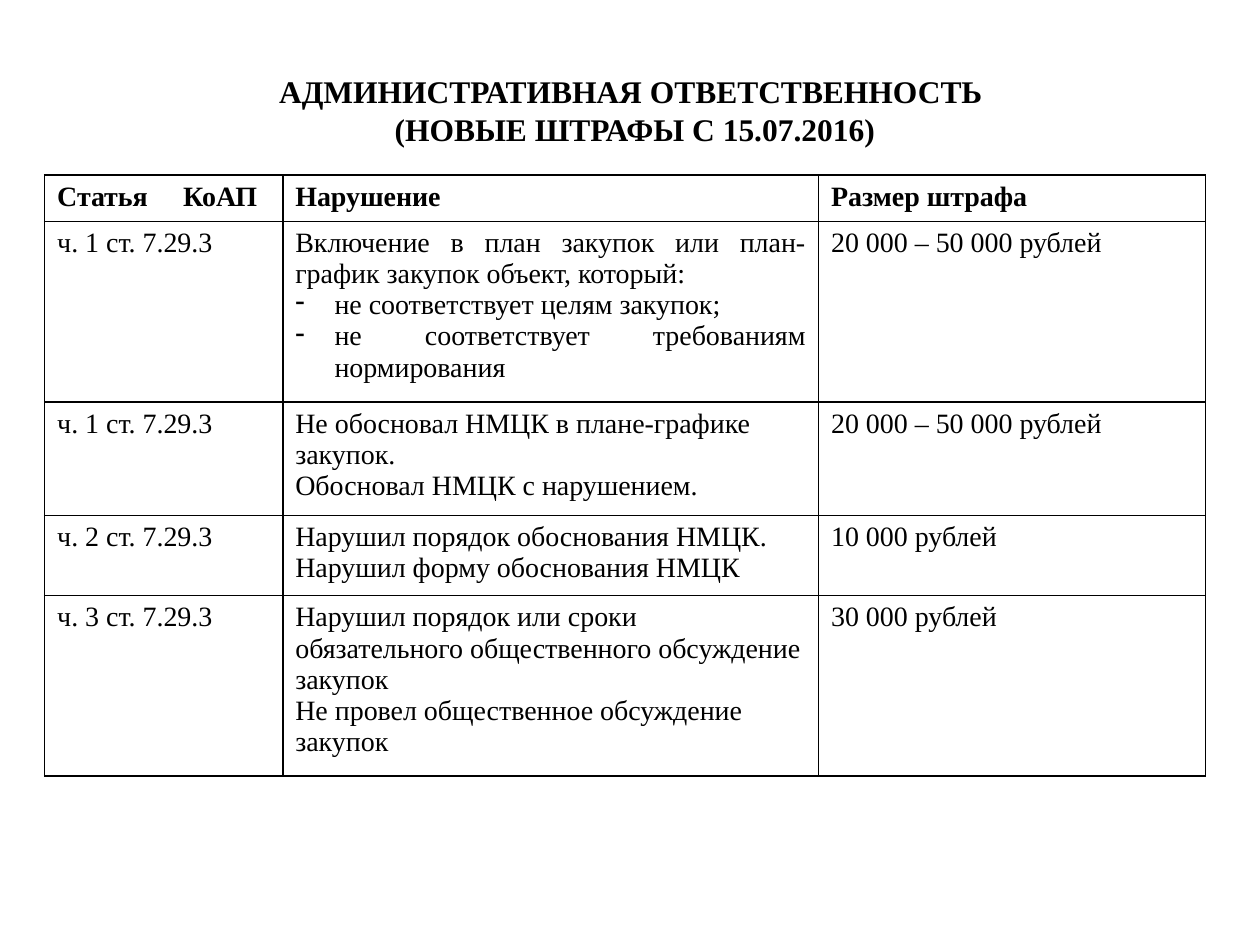
"""Slide with a table of administrative fines for procurement violations."""
from lxml import etree
from pptx import Presentation
from pptx import util as u
from pptx.dml.color import RGBColor
from pptx.enum import text
from pptx.oxml.ns import qn

COLORS = {"ink": "000000"}
FONT = "Times New Roman"

TITLE = ["АДМИНИСТРАТИВНАЯ ОТВЕТСТВЕННОСТЬ ", "(НОВЫЕ ШТРАФЫ С 15.07.2016)"]
COL_WIDTHS = [4.8, 10.8, 7.8]
ROW_HEIGHTS = [0.93, 3.64, 2.28, 1.62, 3.64]
ROWS = [
    (["Статья \tКоАП"], ["Нарушение"], ["Размер штрафа"]),
    (["ч. 1 ст. 7.29.3"],
     ["Включение в план закупок или план-график закупок объект, который:",
      "- не соответствует целям закупок;",
      "- не соответствует требованиям нормирования "],
     ["20 000 – 50 000 рублей"]),
    (["ч. 1 ст. 7.29.3"],
     ["Не обосновал НМЦК в плане-графике закупок.",
      "Обосновал НМЦК с нарушением."],
     ["20 000 – 50 000 рублей"]),
    (["ч. 2 ст. 7.29.3"],
     ["Нарушил порядок обоснования НМЦК.",
      "Нарушил форму обоснования НМЦК"],
     ["10 000 рублей"]),
    (["ч. 3 ст. 7.29.3"],
     ["Нарушил порядок или сроки обязательного общественного обсуждение закупок",
      "Не провел общественное обсуждение закупок"],
     ["30 000 рублей"]),
]


class Deck:
    """Holds the style and the current slide."""

    def __init__(self, prs):
        self.s = prs.slides.add_slide(prs.slide_layouts[5])

    def fill_text(self, tf, lines, size, bold, align):
        """Fill a text frame; lines starting with a dash become bullets."""
        for i, line in enumerate(lines):
            p = tf.paragraphs[0] if i == 0 else tf.add_paragraph()
            p.add_run().text = line.removeprefix("- ")
            p.alignment = align
            p.font.name, p.font.size, p.font.bold = FONT, u.Pt(size), bold
            p.font.color.rgb = RGBColor.from_string(COLORS["ink"])
            if line.startswith("- "):
                self.bullet(p)

    def bullet(self, p):
        """Give a paragraph a hanging dash."""
        pPr = p._p.get_or_add_pPr()
        indent = u.Cm(0.79)
        pPr.set("marL", str(indent))
        pPr.set("indent", str(-indent))
        bu = etree.Element(qn("a:buChar"), char="-")
        pPr.find(qn("a:defRPr")).addprevious(bu)

    def title(self, lines, x, y, w, h):
        """Place and fill the title placeholder."""
        sp = self.s.shapes.title
        sp.left, sp.top, sp.width, sp.height = map(u.Cm, (x, y, w, h))
        tf = sp.text_frame
        tf.word_wrap = True
        tf.auto_size = text.MSO_AUTO_SIZE.SHAPE_TO_FIT_TEXT
        tf.vertical_anchor = text.MSO_ANCHOR.TOP
        self.fill_text(tf, lines, 18, True, text.PP_ALIGN.CENTER)

    def borders(self, cell, width=1):
        """Draw a solid line on all four sides of a cell."""
        tcPr = cell._tc.get_or_add_tcPr()
        for i, side in enumerate("LRTB"):
            ln = etree.Element(qn(f"a:ln{side}"), w=str(u.Pt(width)))
            fill = etree.SubElement(ln, qn("a:solidFill"))
            etree.SubElement(fill, qn("a:srgbClr"), val=COLORS["ink"])
            tcPr.insert(i, ln)

    def table(self, rows, widths, heights, x, y):
        """Add a ruled table with a bold first row."""
        tbl = self.s.shapes.add_table(
            len(rows), len(widths), u.Cm(x), u.Cm(y),
            u.Cm(sum(widths)), u.Cm(sum(heights))).table
        tbl.first_row = tbl.horz_banding = False
        for col, width in zip(tbl.columns, widths):
            col.width = u.Cm(width)
        for r, (row, height) in enumerate(zip(rows, heights)):
            tbl.rows[r].height = u.Cm(height)
            for c, lines in enumerate(row):
                cell = tbl.cell(r, c)
                bulleted = any(line.startswith("- ") for line in lines)
                align = text.PP_ALIGN.JUSTIFY if bulleted else text.PP_ALIGN.LEFT
                self.fill_text(cell.text_frame, lines, 16, r == 0, align)
                cell.fill.background()
                self.borders(cell)


def main():
    """Build and save the slide."""
    prs = Presentation()
    prs.slide_width, prs.slide_height = u.Cm(25.4), u.Cm(19.05)
    deck = Deck(prs)
    deck.title(TITLE, 0.9, 1.32, 23.8, 1.8)
    deck.table(ROWS, COL_WIDTHS, ROW_HEIGHTS, 0.9, 3.53)
    prs.save("out.pptx")


if __name__ == "__main__":
    main()
